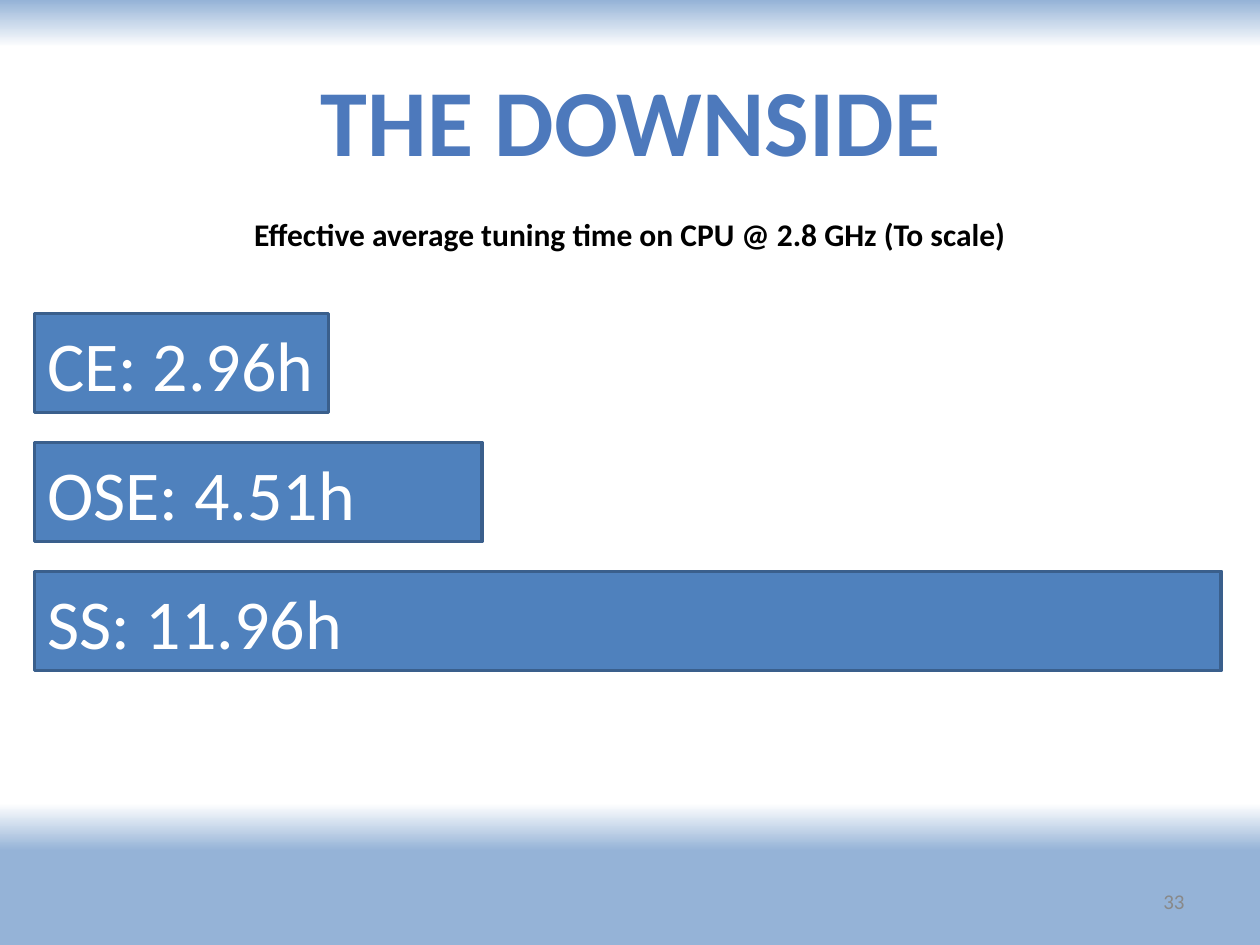
from dataclasses import dataclass

from lxml import etree
from pptx import Presentation
from pptx.dml.color import RGBColor
from pptx.enum.shapes import MSO_SHAPE
from pptx.enum.text import MSO_ANCHOR, PP_ALIGN
from pptx.oxml.ns import qn
from pptx.util import Cm, Pt

RECTANGLE = MSO_SHAPE.RECTANGLE
TOP, MIDDLE = MSO_ANCHOR.TOP, MSO_ANCHOR.MIDDLE
LEFT, CENTER, RIGHT = PP_ALIGN.LEFT, PP_ALIGN.CENTER, PP_ALIGN.RIGHT


@dataclass(frozen=True)
class Theme:
    font: str = "Calibri"
    title: str = "4D79BC"
    text: str = "000000"
    page: str = "898989"
    bar: str = "4F81BD"
    bar_line: str = "3A5F8C"
    bar_text: str = "FFFFFF"
    band: str = "95B3D7"
    paper: str = "FFFFFF"
    title_size: int = 54
    bar_size: int = 40
    caption_size: int = 18
    page_size: int = 12


theme = Theme()


def write(shape, text, size, color, align, anchor=TOP, bold=False, wrap=True):
    frame = shape.text_frame
    frame.text = text
    frame.word_wrap = wrap
    frame.vertical_anchor = anchor
    paragraph = frame.paragraphs[0]
    paragraph.alignment = align
    font = paragraph.runs[0].font
    font.name = theme.font
    font.size = Pt(size)
    font.bold = bold
    font.color.rgb = RGBColor.from_string(color)


deck = Presentation()
deck.slide_width, deck.slide_height = Cm(25.4), Cm(19.05)
slide = deck.slides.add_slide(deck.slide_layouts[5])

# Background: white page between a thin top band and a deep bottom band
backdrop = slide.background.fill
backdrop.gradient()
backdrop.gradient_angle = 270
stops = slide.background._cSld.find(".//" + qn("a:gsLst"))
for default_stop in list(stops):
    stops.remove(default_stop)
for percent, color in [(0, theme.band), (5, theme.paper), (85, theme.paper),
                       (90, theme.band), (100, theme.band)]:
    stop = etree.SubElement(stops, qn("a:gs"), pos=str(percent * 1000))
    etree.SubElement(stop, qn("a:srgbClr"), val=color)

# Heading and caption
title = slide.shapes.title
title.left, title.top, title.width, title.height = Cm(6.15), Cm(1.12), Cm(13.13), Cm(2.57)
write(title, "THE DOWNSIDE", theme.title_size, theme.title, CENTER, bold=True, wrap=False)

caption = slide.shapes.add_textbox(Cm(4.6), Cm(4.22), Cm(16.2), Cm(1.8))
write(caption, "Effective average tuning time on CPU @ 2.8 GHz (To scale)",
      theme.caption_size, theme.text, CENTER, bold=True)

# Bars: two centimetres for each hour of tuning
CM_PER_HOUR = 2
BAR_LEFT, FIRST_TOP, BAR_HEIGHT, BAR_PITCH = 0.7, 6.32, 2, 2.6
tuning_hours = [("CE", 2.96), ("OSE", 4.51), ("SS", 11.96)]
for row, (method, hours) in enumerate(tuning_hours):
    bar = slide.shapes.add_shape(RECTANGLE, Cm(BAR_LEFT), Cm(FIRST_TOP + row * BAR_PITCH),
                                 Cm(hours * CM_PER_HOUR), Cm(BAR_HEIGHT))
    bar.shadow.inherit = False
    bar.fill.solid()
    bar.fill.fore_color.rgb = RGBColor.from_string(theme.bar)
    bar.line.color.rgb = RGBColor.from_string(theme.bar_line)
    bar.line.width = Pt(2)
    write(bar, f"{method}: {hours}h", theme.bar_size, theme.bar_text, LEFT, MIDDLE)

page_number = slide.shapes.add_textbox(Cm(18.2), Cm(17.66), Cm(5.93), Cm(1.01))
write(page_number, "33", theme.page_size, theme.page, RIGHT, MIDDLE)

deck.save("out.pptx")
